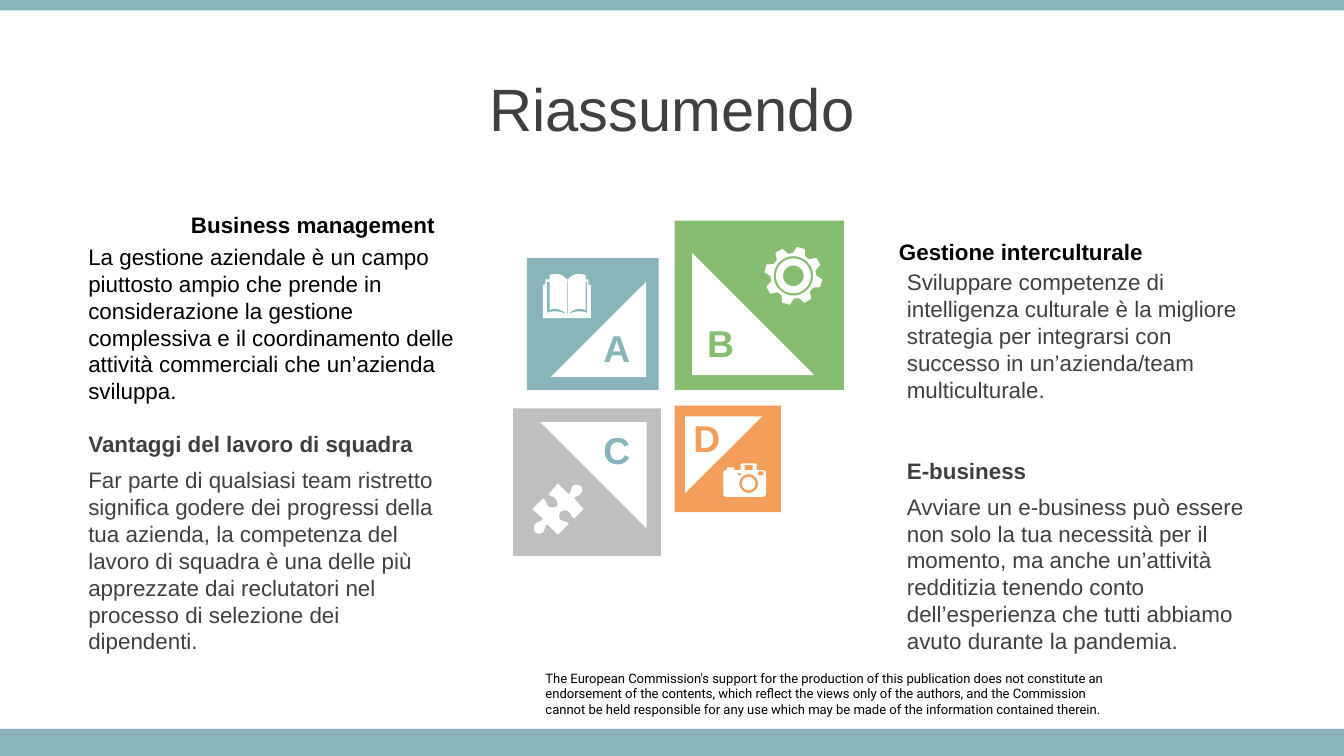
from math import cos, radians, sin

from pptx import Presentation
from pptx.dml.color import RGBColor
from pptx.enum.shapes import MSO_SHAPE
from pptx.enum.text import MSO_ANCHOR, PP_ALIGN
from pptx.util import Cm, Pt

RECT, TRIANGLE = MSO_SHAPE.RECTANGLE, MSO_SHAPE.RIGHT_TRIANGLE
LEFT, CENTER, RIGHT = PP_ALIGN.LEFT, PP_ALIGN.CENTER, PP_ALIGN.RIGHT
TOP, MIDDLE = MSO_ANCHOR.TOP, MSO_ANCHOR.MIDDLE

THEME = {
    "teal": "87B5BA", "green": "86BD70", "orange": "F39E5A", "gray": "BFBFBF",
    "white": "FFFFFF", "dark": "404040", "black": "000000",
    "font": "Arial", "note_font": "Roboto",
    "title": 32, "letter": 20, "text": 12, "note": 7,
}
SLIDE_W, SLIDE_H = 25.4, 14.29

TITLE = "Riassumendo"
TOPICS = [
    {"heading": "Business management", "heading_at": (1.42, 3.86), "align": RIGHT,
     "body_at": (1.42, 4.47), "width": 7.8, "height": 3.33,
     "heading_color": "black", "body_color": "black",
     "body": ["La gestione aziendale è un campo", "piuttosto ampio che prende in",
              "considerazione la gestione", "complessiva e il coordinamento delle",
              "attività commerciali che un’azienda", "sviluppa."]},
    {"heading": "Vantaggi del lavoro di squadra", "heading_at": (1.42, 8), "align": LEFT,
     "body_at": (1.42, 8.69), "width": 7.06, "height": 4.37,
     "heading_color": "dark", "body_color": "dark",
     "body": ["Far parte di qualsiasi team ristretto significa godere dei progressi "
              "della tua azienda, la competenza del lavoro di squadra è una delle più "
              "apprezzate dai reclutatori nel processo di selezione dei dipendenti."]},
    {"heading": "Gestione interculturale", "heading_at": (16.74, 4.37), "align": LEFT,
     "body_at": (16.89, 4.95), "width": 7.06, "height": 3.33,
     "heading_color": "black", "body_color": "dark",
     "body": ["Sviluppare competenze di intelligenza culturale è la migliore strategia "
              "per integrarsi con successo in un’azienda/team multiculturale."]},
    {"heading": "E-business", "heading_at": (16.89, 8.51), "align": LEFT,
     "body_at": (16.89, 9.19), "width": 7.06, "height": 3.84,
     "heading_color": "dark", "body_color": "dark",
     "body": ["Avviare un e-business può essere non solo la tua necessità per il momento, "
              "ma anche un’attività redditizia tenendo conto dell’esperienza che tutti "
              "abbiamo avuto durante la pandemia."]},
]
DISCLAIMER = [
    "The European Commission's support for the production of this publication does not "
    "constitute an endorsement of the contents, which reflect the views only of the "
    "authors, and the Commission",
    "cannot be held responsible for any use which may be made of the information "
    "contained therein.",
]
BARS = [(0, 0.2), (13.78, 0.51)]
TILES = [
    ("A", "teal", "teal", (9.96, 4.88, 2.49), (10.41, 5.33, 1.8), 270, (11.1, 6.02)),
    ("B", "green", "green", (12.75, 4.17, 3.2), (13.08, 4.78, 2.31), 0, (13.06, 5.92)),
    ("C", "gray", "teal", (9.7, 7.72, 2.79), (10.21, 7.98, 2.01), 180, (11.1, 7.95)),
    ("D", "orange", "orange", (12.75, 7.67, 2.01), (12.95, 7.87, 1.45), 90, (12.8, 7.72)),
]


def polar(center, radius, degrees):
    angle = radians(degrees)
    return center[0] + radius * sin(angle), center[1] - radius * cos(angle)


def circle(center, radius):
    return [polar(center, radius, a) for a in range(0, 360, 10)]


def box(left, top, right, bottom):
    return [(left, top), (right, top), (right, bottom), (left, bottom)]


HUB, LENS = (21.5, 21.5), (19, 15)
GEAR = [[polar(HUB, radius, 15 + 45 * tooth + offset) for tooth in range(8)
         for offset, radius in ((-16, 17), (-8, 21.7), (8, 21.7), (16, 17))]]
GEAR += [circle(HUB, radius) for radius in (14.7, 13, 7.7)]
BOOK = [
    [(0, 8), (2, 8), (2, 4), (5, 4), (5, 1), (7, 0, 8, 0, 10, 0), (13, 0, 15, 1, 18, 4),
     (19, 4), (21, 1, 24, 0, 27, 0), (28, 0, 30, 0, 32, 1), (32, 4), (34, 4), (34, 8),
     (36, 8), (36, 33), (0, 33)],
    [(18, 30), (13, 26, 9, 25, 5, 27), (5, 6), (3, 6), (3, 29), (9, 27, 12, 28, 18, 30)],
    [(19, 30), (24, 28, 27, 27, 33, 29), (33, 6), (32, 6), (32, 27),
     (28, 25, 23, 26, 19, 30)],
    box(18.25, 5, 18.75, 30),
]
CAMERA = [
    [(14, 0), (24, 0), (25, 1), (25, 5), (29, 5), (31, 5, 32, 6, 32, 7), (32, 22),
     (32, 24, 31, 25, 29, 25), (2, 25), (1, 25, 0, 24, 0, 22), (0, 7),
     (0, 6, 1, 5, 2, 5), (3, 5), (3, 3), (8, 3), (8, 5), (13, 5), (13, 1)],
    box(16, 1, 22, 5), box(11, 7, 13, 9), box(26, 6, 30, 9),
    circle(LENS, 7), circle(LENS, 5),
]
PUZZLE = [
    [(36, 2), (37, 3, 38, 6, 36, 7), (35, 10, 33, 8, 31, 11), (38, 19), (31, 26),
     (28, 24, 29, 22, 27, 21), (25, 19, 23, 20, 21, 21), (20, 22, 19, 25, 21, 27),
     (24, 29, 25, 27, 27, 30), (19, 38), (11, 30), (9, 32, 10, 33, 8, 36),
     (6, 38, 3, 37, 2, 36), (1, 34, 1, 32, 2, 30), (4, 28, 6, 29, 8, 26), (0, 19),
     (8, 11), (11, 13, 10, 15, 12, 17), (14, 18, 16, 18, 18, 17),
     (19, 16, 19, 13, 17, 11), (15, 9, 14, 10, 12, 8), (19, 0), (27, 8),
     (30, 5, 28, 4, 30, 2), (32, 0, 35, 1, 36, 2)],
]
ICONS = [
    (BOOK, 10.26, 5.18, 0.91, 36),
    (PUZZLE, 10.06, 9.14, 0.97, 38),
    (GEAR, 14.45, 4.67, 1.09, 43),
    (CAMERA, 13.67, 8.76, 0.81, 32),
]


def color(name):
    return RGBColor.from_string(THEME[name])


def paint(shape, fill):
    shape.shadow.inherit = False
    shape.fill.solid()
    shape.fill.fore_color.rgb = color(fill)
    shape.line.fill.background()


def add_block(slide, kind, place, fill, rotation=0):
    block = slide.shapes.add_shape(kind, *map(Cm, place))
    block.rotation = rotation
    paint(block, fill)


def flatten(loop, steps=6):
    points = []
    for node in loop:
        if len(node) == 2:
            points.append(node)
            continue
        controls = [points[-1], node[:2], node[2:4], node[4:]]
        for step in range(1, steps + 1):
            t = step / steps
            weights = ((1 - t) ** 3, 3 * t * (1 - t) ** 2, 3 * t * t * (1 - t), t ** 3)
            points.append(tuple(sum(w * c[axis] for w, c in zip(weights, controls))
                                for axis in (0, 1)))
    return [(x * 100, y * 100) for x, y in points]


def add_icon(slide, loops, left, top, width, units):
    outlines = [flatten(loop) for loop in loops]
    builder = slide.shapes.build_freeform(*outlines[0][0], scale=Cm(width) / (units * 100))
    for index, outline in enumerate(outlines):
        if index:
            builder.move_to(*outline[0])
        builder.add_line_segments(outline[1:], close=True)
    paint(builder.convert_to_shape(Cm(left), Cm(top)), "white")


def write(shape, lines, size, tint, align=LEFT, bold=False, font="font", anchor=TOP):
    frame = shape.text_frame
    frame.word_wrap = True
    frame.vertical_anchor = anchor
    frame.text = "\n".join(lines)
    for paragraph in frame.paragraphs:
        paragraph.alignment = align
        for run in paragraph.runs:
            run.font.name = THEME[font]
            run.font.size = Pt(THEME[size])
            run.font.bold = bold
            run.font.color.rgb = color(tint)


def add_text(slide, place, *args, **style):
    text = slide.shapes.add_textbox(*map(Cm, place))
    write(text, *args, **style)
    return text


def main():
    deck = Presentation()
    deck.slide_width, deck.slide_height = Cm(SLIDE_W), Cm(SLIDE_H)
    slide = deck.slides.add_slide(deck.slide_layouts[5])

    note = add_text(slide, (10.31, 12.67, 10.59, 0.89), DISCLAIMER, "note", "black",
                    font="note_font").text_frame
    note.margin_left = note.margin_right = note.margin_top = note.margin_bottom = 0
    for top, height in BARS:
        add_block(slide, RECT, (0, top, SLIDE_W, height), "teal")

    title = slide.shapes.title
    title.left, title.top, title.width, title.height = map(Cm, (0, 1.24, SLIDE_W, 1.6))
    write(title, [TITLE], "title", "dark", CENTER, anchor=MIDDLE)

    for letter, fill, tint, square, triangle, turn, letter_at in TILES:
        add_block(slide, RECT, (*square, square[2]), fill)
        add_block(slide, TRIANGLE, (*triangle, triangle[2]), "white", turn)
        add_text(slide, (*letter_at, 1.12, 1.12), [letter], "letter", tint, CENTER, bold=True)
    for icon in ICONS:
        add_icon(slide, *icon)

    for topic in TOPICS:
        add_text(slide, (*topic["body_at"], topic["width"], topic["height"]),
                 topic["body"], "text", topic["body_color"])
        add_text(slide, (*topic["heading_at"], 7.05, 0.76), [topic["heading"]],
                 "text", topic["heading_color"], topic["align"], bold=True)
    deck.save("out.pptx")


if __name__ == "__main__":
    main()
